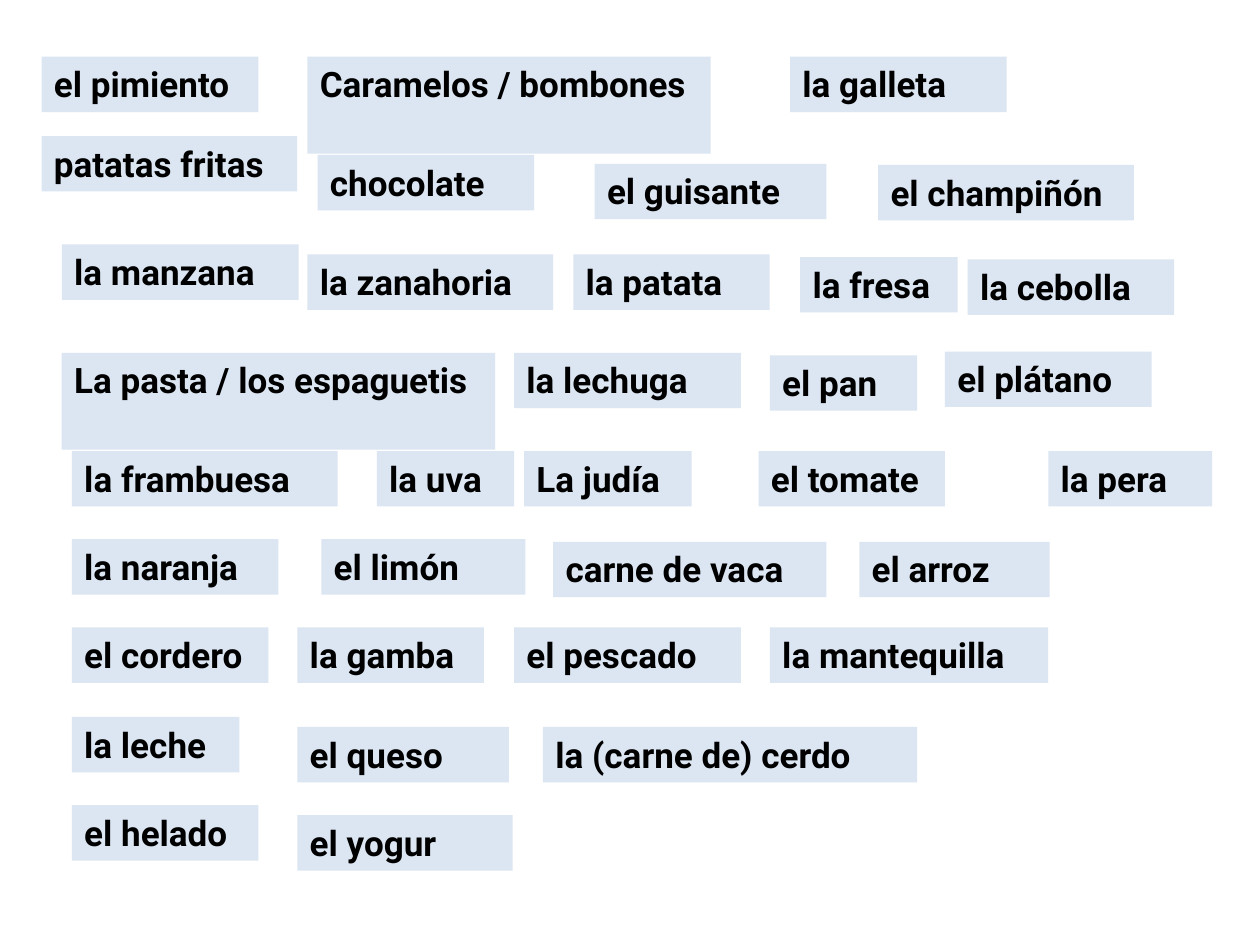
from pptx import Presentation
from pptx.dml.color import RGBColor
from pptx.enum.shapes import MSO_SHAPE as Shape
from pptx.enum.text import MSO_ANCHOR as Anchor, MSO_AUTO_SIZE as AutoSize, PP_ALIGN as Align
from pptx.util import Pt

PX = 9144
CARD_HEIGHT = 44
TALL_HEIGHT = 77
CARD_FILL = "DCE6F2"
TEXT_COLOR = "000000"
FONT_FORMAT = {"name": "Roboto", "size": Pt(20), "bold": True}
FRAME_FORMAT = {
    "word_wrap": True,
    "auto_size": AutoSize.SHAPE_TO_FIT_TEXT,
    "vertical_anchor": Anchor.TOP,
}

# noqa
WORD_ROWS = [
    (45, [("el pimiento", 33, 0, 172, CARD_HEIGHT),
          ("Caramelos / bombones", 244, 0, 320, TALL_HEIGHT),
          ("la galleta", 627, 0, 172, CARD_HEIGHT)]),
    (108, [("patatas fritas", 33, 0, 203, CARD_HEIGHT),
           ("chocolate", 252, 15, 172, CARD_HEIGHT),
           ("el guisante", 472, 22, 184, CARD_HEIGHT),
           ("el champiñón", 697, 23, 203, CARD_HEIGHT)]),
    (194, [("la manzana", 49, 0, 188, CARD_HEIGHT),
           ("la zanahoria", 244, 8, 195, CARD_HEIGHT),
           ("la patata", 455, 8, 156, CARD_HEIGHT),
           ("la fresa", 635, 10, 125, CARD_HEIGHT),
           ("la cebolla", 768, 12, 164, CARD_HEIGHT)]),
    (280, [("La pasta / los espaguetis", 49, 0, 344, TALL_HEIGHT),
           ("la lechuga", 408, 0, 180, CARD_HEIGHT),
           ("el pan", 611, 2, 117, CARD_HEIGHT),
           ("el plátano", 750, -1, 164, CARD_HEIGHT)]),
    (358, [("la frambuesa", 57, 0, 211, CARD_HEIGHT),
           ("la uva", 299, 0, 109, CARD_HEIGHT),
           ("La judía", 416, 0, 133, CARD_HEIGHT),
           ("el tomate", 602, 0, 148, CARD_HEIGHT),
           ("la pera", 832, 0, 130, CARD_HEIGHT)]),
    (428, [("la naranja", 57, 0, 164, CARD_HEIGHT),
           ("el limón", 255, 0, 162, CARD_HEIGHT),
           ("carne de vaca", 439, 2, 217, CARD_HEIGHT),
           ("el arroz", 682, 2, 151, CARD_HEIGHT)]),
    (498, [("el cordero", 57, 0, 156, CARD_HEIGHT),
           ("la gamba", 236, 0, 148, CARD_HEIGHT),
           ("el pescado", 408, 0, 180, CARD_HEIGHT),
           ("la mantequilla", 611, 0, 221, CARD_HEIGHT)]),
    (569, [("la leche", 57, 0, 133, CARD_HEIGHT),
           ("el queso", 236, 8, 168, CARD_HEIGHT),
           ("la (carne de) cerdo", 431, 8, 297, CARD_HEIGHT)]),
    (639, [("el helado", 57, 0, 148, CARD_HEIGHT),
           ("el yogur", 236, 8, 171, CARD_HEIGHT)]),
]


def color(hex_string):
    return RGBColor.from_string(hex_string)


def apply_format(target, values):
    for name, value in values.items():
        setattr(target, name, value)


def add_card(slide, text, left, top, width, height):
    box = [length * PX for length in (left, top, width, height)]
    card = slide.shapes.add_shape(Shape.RECTANGLE, *box)
    card.shadow.inherit = False
    card.fill.solid()
    card.fill.fore_color.rgb = color(CARD_FILL)
    card.line.fill.background()
    apply_format(card.text_frame, FRAME_FORMAT)
    paragraph = card.text_frame.paragraphs[0]
    paragraph.alignment = Align.LEFT
    run = paragraph.add_run()
    run.text = text
    apply_format(run.font, FONT_FORMAT)
    run.font.color.rgb = color(TEXT_COLOR)


def add_word_row(slide, row_top, words):
    for text, left, drop, width, height in words:
        add_card(slide, text, left, row_top + drop, width, height)


def main():
    presentation = Presentation()
    apply_format(presentation, {"slide_width": 1000 * PX, "slide_height": 750 * PX})
    slide = presentation.slides.add_slide(presentation.slide_layouts[6])
    for row_top, words in WORD_ROWS:
        add_word_row(slide, row_top, words)
    presentation.save("out.pptx")


if __name__ == "__main__":
    main()
